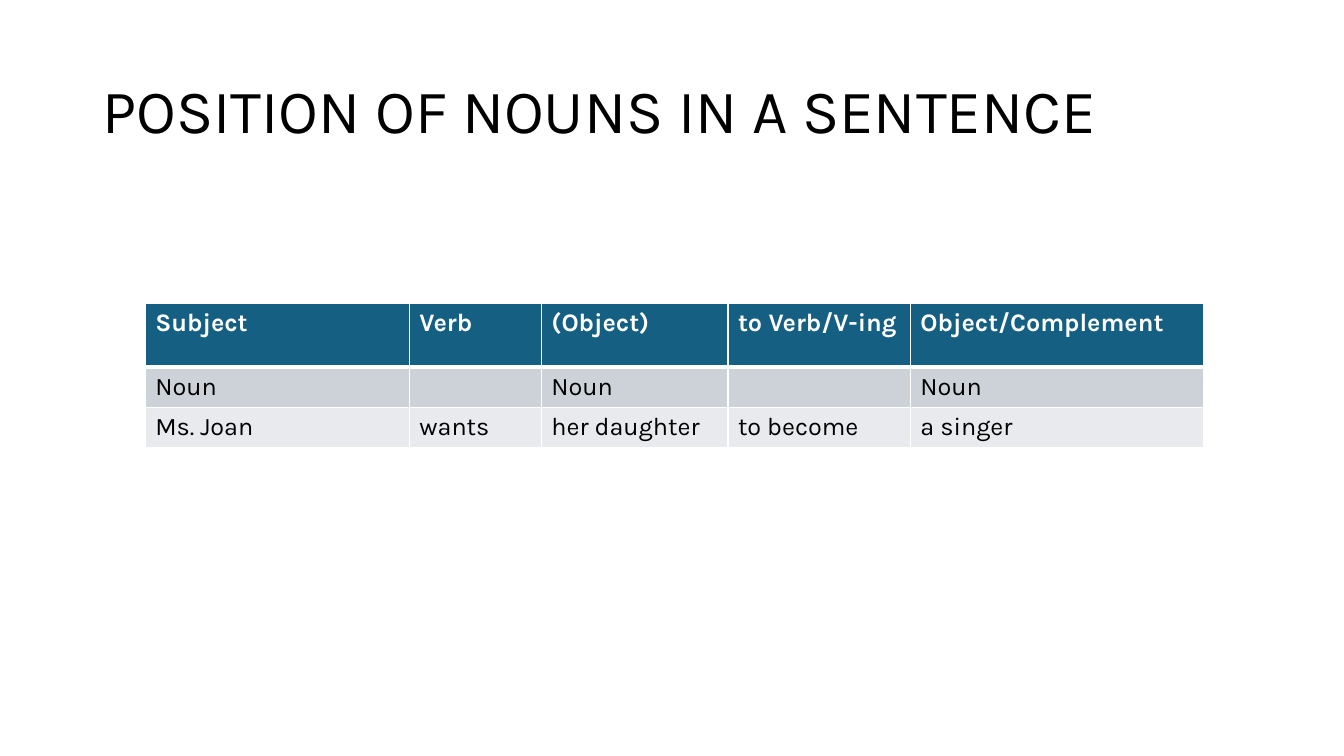
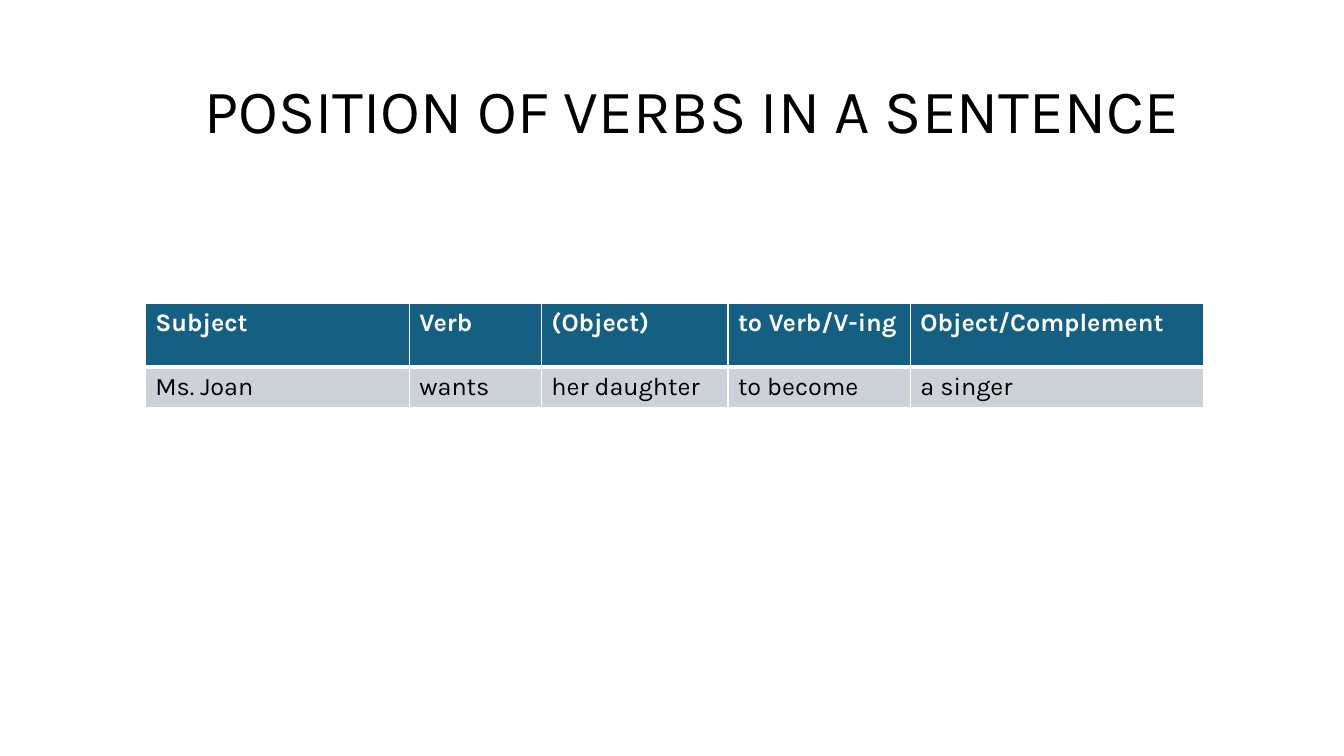
"""Build two slides on where nouns and verbs stand in a sentence."""
import pptx
import pptx.dml.color
import pptx.enum.text
import pptx.oxml
import pptx.oxml.ns
import pptx.util
from pptx.util import Inches, Pt

THEME = {
    "font": "Karla",
    "title_size": 44,
    "cell_size": 18,
    "text": "000000",
    "header_text": "FFFFFF",
    "header_fill": "156082",
    "band_fills": ("CCD2D8", "E8EAED"),
    "border": "FFFFFF",
    "thin": 1,
    "thick": 3,
}

HEADER = ("Subject", "Verb", "(Object)", "to Verb/V-ing", "Object/Complement")
EXAMPLE = ("Ms. Joan", "wants", "her daughter", "to become", "a singer")
SLIDES = [
    {
        "title": "POSITION OF NOUNS IN A SENTENCE",
        "indent": 0,
        "rows": [HEADER, ("Noun", "", "Noun", "", "Noun"), EXAMPLE],
    },
    {
        "title": "POSITION OF VERBS IN A SENTENCE",
        "indent": 1.01,
        "rows": [HEADER, EXAMPLE],
    },
]

TITLE_BOX = (0.92, 0.4, 11.5, 1.45)
TABLE_LEFT, TABLE_TOP = 1.44, 3.01
COL_WIDTHS = (2.62, 1.31, 1.85, 1.81, 2.91)
HEADER_HEIGHT, ROW_HEIGHT = 0.63, 0.36


def rgb(value):
    return pptx.dml.color.RGBColor.from_string(value)


def add_run(p, text, size, color, bold=False):
    r = p.add_run()
    r.text = text
    r.font.name = THEME["font"]
    r.font.size = Pt(size)
    r.font.bold = bold
    r.font.color.rgb = rgb(color)


def add_title(s, text, indent):
    tf = s.shapes.add_textbox(*map(Inches, TITLE_BOX)).text_frame
    tf.word_wrap = True
    tf.vertical_anchor = pptx.enum.text.MSO_ANCHOR.MIDDLE
    p = tf.paragraphs[0]
    p.line_spacing = 0.9
    if indent:
        p._p.get_or_add_pPr().set("marL", str(Inches(indent)))
    add_run(p, text, THEME["title_size"], THEME["text"])


def set_borders(cell, top, bottom):
    widths = {"L": THEME["thin"], "R": THEME["thin"], "T": top, "B": bottom}
    tc_pr = cell._tc.get_or_add_tcPr()
    for side, width in widths.items():
        tc_pr.append(pptx.oxml.parse_xml(
            f'<a:ln{side} {pptx.oxml.ns.nsdecls("a")} w="{Pt(width)}">'
            f'<a:solidFill><a:srgbClr val="{THEME["border"]}"/></a:solidFill>'
            f'</a:ln{side}>'))


def add_table(s, rows):
    heights = [HEADER_HEIGHT] + [ROW_HEIGHT] * (len(rows) - 1)
    table = s.shapes.add_table(
        len(rows), len(COL_WIDTHS), Inches(TABLE_LEFT), Inches(TABLE_TOP),
        Inches(sum(COL_WIDTHS)), Inches(sum(heights))).table
    for column, width in zip(table.columns, COL_WIDTHS):
        column.width = Inches(width)
    bands = THEME["band_fills"]
    for i, (texts, height) in enumerate(zip(rows, heights)):
        table.rows[i].height = Inches(height)
        header = i == 0
        fill = THEME["header_fill"] if header else bands[(i - 1) % len(bands)]
        color = THEME["header_text"] if header else THEME["text"]
        top = THEME["thick"] if i == 1 else THEME["thin"]
        bottom = THEME["thick"] if header else THEME["thin"]
        for j, text in enumerate(texts):
            cell = table.cell(i, j)
            set_borders(cell, top, bottom)
            cell.fill.solid()
            cell.fill.fore_color.rgb = rgb(fill)
            if text:
                add_run(cell.text_frame.paragraphs[0], text,
                        THEME["cell_size"], color, header)


def main():
    prs = pptx.Presentation()
    prs.slide_width, prs.slide_height = Inches(13.33), Inches(7.5)
    for content in SLIDES:
        s = prs.slides.add_slide(prs.slide_layouts[6])
        add_title(s, content["title"], content["indent"])
        add_table(s, content["rows"])
    prs.save("out.pptx")


if __name__ == "__main__":
    main()
